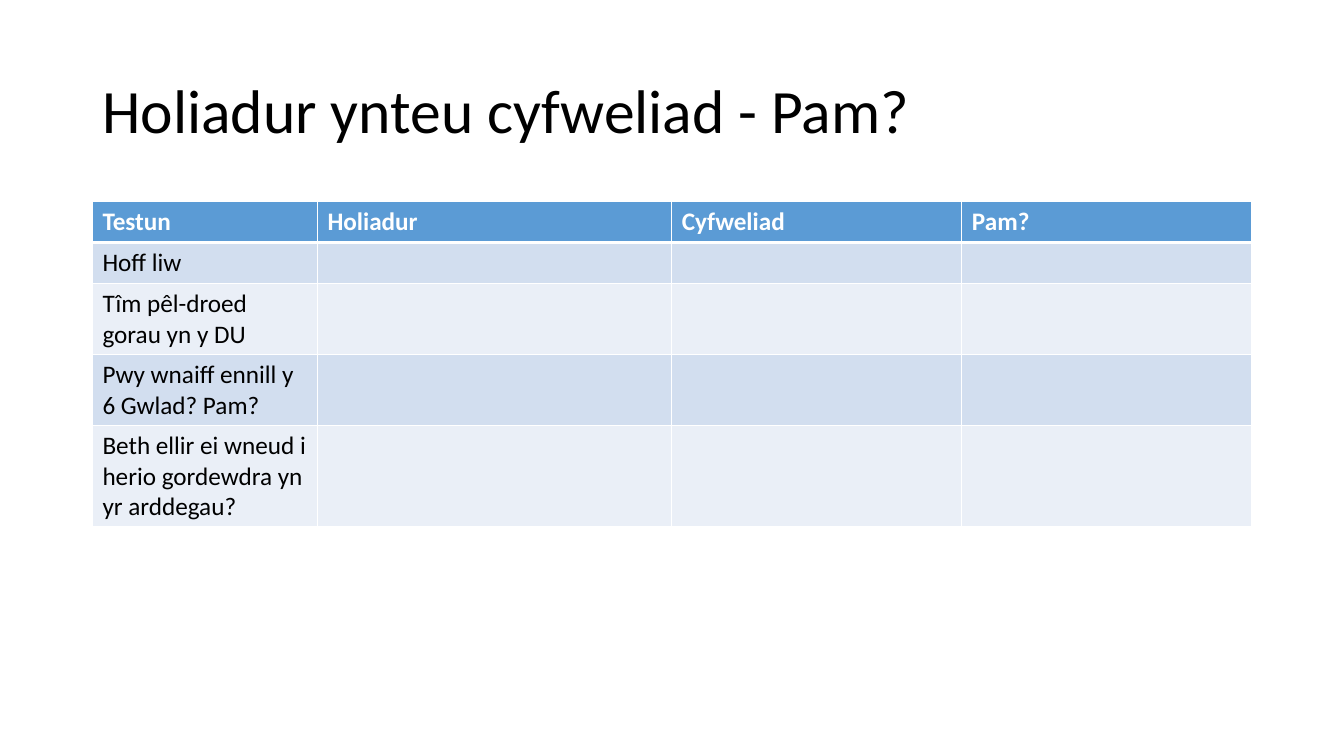
import pptx
import pptx.dml.color
import pptx.enum.text
import pptx.util
from lxml import etree
from pptx.oxml.ns import qn
from pptx.util import Cm, Pt

# Content
TITLE = "Holiadur ynteu cyfweliad - Pam?"
HEADER = ["Testun", "Holiadur", "Cyfweliad", "Pam?"]
TOPICS = [  # topic, lines it takes in its column
    ("Hoff liw", 1),
    ("Tîm pêl-droed gorau yn y DU", 2),
    ("Pwy wnaiff ennill y 6 Gwlad? Pam?", 2),
    ("Beth ellir ei wneud i herio gordewdra yn yr arddegau?", 3),
]

# Style and measures, in cm
FONT = "Calibri"
BLACK, WHITE, BLUE = "000000", "FFFFFF", "5B9BD5"
BANDS = ["D2DEEF", "EAEFF7"]
LEFT, WIDTH = 2.33, 29.21
COLUMNS = [5.67, 8.93, 7.31, 7.3]
ROW, EXTRA_LINE = 1.03, 0.76


def rgb(value):
    return pptx.dml.color.RGBColor.from_string(value)


def style(p, size, color, bold=False):
    p.font.name, p.font.size, p.font.bold = FONT, Pt(size), bold
    p.font.color.rgb = rgb(color)


def border(cell, side, width):
    ln = etree.SubElement(cell._tc.get_or_add_tcPr(), qn("a:ln" + side), w=str(Pt(width)))
    fill = etree.SubElement(ln, qn("a:solidFill"))
    etree.SubElement(fill, qn("a:srgbClr"), val=WHITE)


prs = pptx.Presentation()
prs.slide_width, prs.slide_height = Cm(33.87), Cm(19.05)
s = prs.slides.add_slide(prs.slide_layouts[6])

# Title
tf = s.shapes.add_textbox(Cm(LEFT), Cm(1.01), Cm(WIDTH), Cm(3.68)).text_frame
tf.word_wrap = True
tf.vertical_anchor = pptx.enum.text.MSO_ANCHOR.MIDDLE
p = tf.paragraphs[0]
p.text = TITLE
p.line_spacing = 0.9
style(p, 44, BLACK)

# Table
heights = [ROW] + [ROW + EXTRA_LINE * (lines - 1) for _, lines in TOPICS]
rows = [HEADER] + [[topic, "", "", ""] for topic, _ in TOPICS]
table = s.shapes.add_table(len(rows), len(COLUMNS), Cm(LEFT), Cm(5.08),
                           Cm(WIDTH), Cm(sum(heights))).table
for column, width in zip(table.columns, COLUMNS):
    column.width = Cm(width)
for i, texts in enumerate(rows):
    table.rows[i].height = Cm(heights[i])
    for j, text in enumerate(texts):
        cell = table.cell(i, j)
        for side in "LRTB":
            under_header = (i, side) in [(0, "B"), (1, "T")]
            border(cell, side, 3 if under_header else 1)
        cell.fill.solid()
        cell.fill.fore_color.rgb = rgb(BANDS[(i - 1) % 2] if i else BLUE)
        p = cell.text_frame.paragraphs[0]
        p.text = text
        style(p, 18, BLACK if i else WHITE, bold=i == 0)

prs.save("out.pptx")
